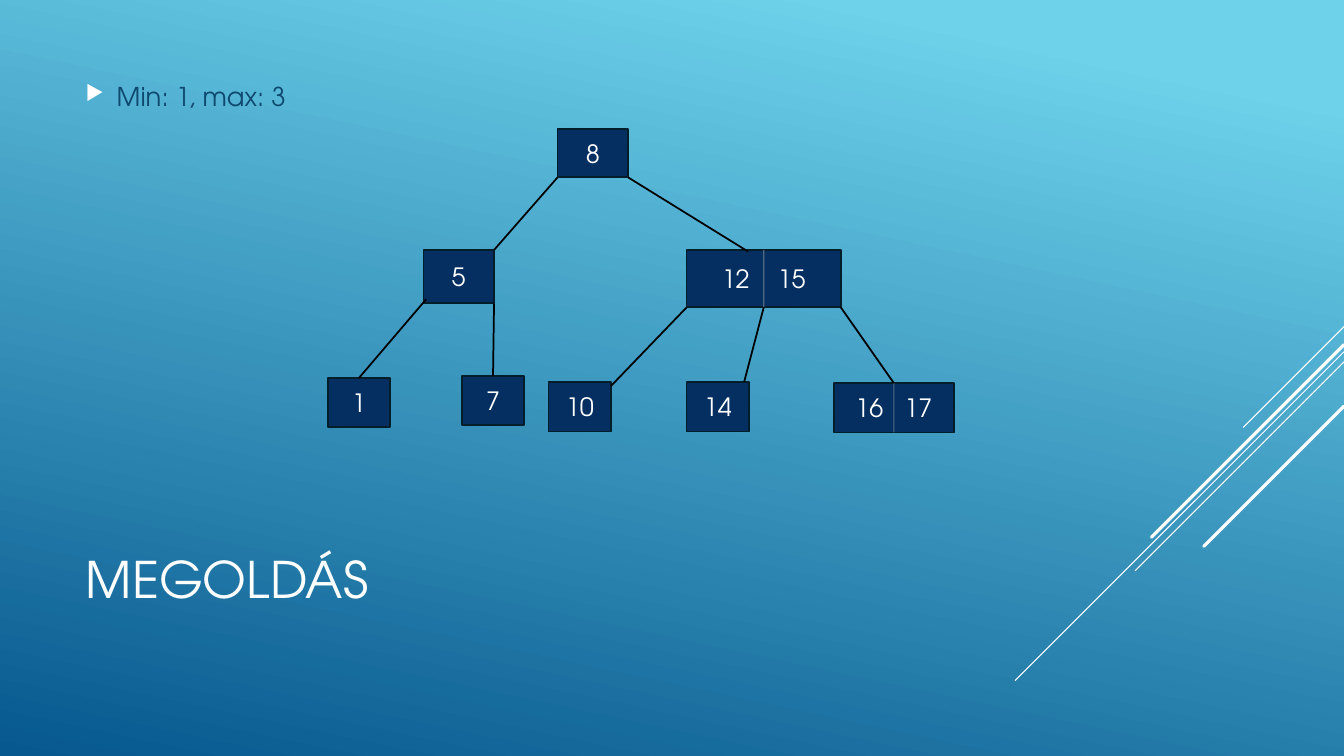
from dataclasses import dataclass

from lxml import etree
from pptx import Presentation
from pptx.dml.color import RGBColor
from pptx.enum.shapes import MSO_CONNECTOR, MSO_SHAPE
from pptx.enum.text import MSO_ANCHOR, MSO_AUTO_SIZE, PP_ALIGN
from pptx.oxml.ns import qn
from pptx.util import Inches, Pt

STRAIGHT = MSO_CONNECTOR.STRAIGHT
RECTANGLE = MSO_SHAPE.RECTANGLE
MIDDLE = MSO_ANCHOR.MIDDLE
LEFT, CENTER = PP_ALIGN.LEFT, PP_ALIGN.CENTER
NO_AUTOFIT = MSO_AUTO_SIZE.NONE


@dataclass(frozen=True)
class Theme:
    """Colours, font and type sizes of the deck."""
    sky: str = "6ED2EB"
    deep: str = "06588E"
    white: str = "FFFFFF"
    body: str = "0F496F"
    node: str = "052F61"
    border: str = "021E2B"
    divider: str = "89919C"
    edge: str = "000000"
    font: str = "TeX Gyre Adventor"
    title_size: float = 36
    body_size: float = 18.5
    node_size: float = 18


THEME = Theme()
SIDE_SITES = {(0.5, 0): 0, (0.5, 1): 2}

NODES = {
    "8": (2.28, 0, 0.7, 0.48),
    "5": (0.95, 1.2, 0.7, 0.53),
    "12 15": (3.56, 1.2, 1.53, 0.57),
    "1": (0, 2.47, 0.62, 0.49),
    "7": (1.33, 2.45, 0.62, 0.49),
    "10": (2.19, 2.51, 0.62, 0.49),
    "14": (3.56, 2.51, 0.62, 0.49),
    "16 17": (5.02, 2.52, 1.19, 0.49),
}
KEY_GAPS = {"12 15": 15, "16 17": 10}
EDGES = [
    ("8", (0, 1), "5", (1, 0)),
    ("5", (0.04, 0.92), "1", (0.5, 0)),
    ("8", (1, 1), "12 15", (0.4, 0.03)),
    ("12 15", (0, 1), "10", (1, 0.08)),
    ("12 15", (0.5, 1), "14", (0.92, 0)),
    ("12 15", (1, 1), "16 17", (0.5, 0)),
    ("5", (1, 1), "7", (0.5, 0)),
]
STREAKS = [(0, 1, 0.75), (0.25, 3.26, 0.75), (0.35, 2.07, 0.75),
           (0.18, 1.91, 2.25), (0.79, 1.39, 2.25)]


def style_font(font, size, color):
    """Give a font the theme face, a size and a colour."""
    font.name = THEME.font
    font.size = Pt(size)
    font.color.rgb = RGBColor.from_string(color)


def add_line(page, start, end, color, width):
    """Draw a straight line without shadow between two points."""
    line = page.shapes.add_connector(STRAIGHT, *start, *end)
    line.line.color.rgb = RGBColor.from_string(color)
    line.line.width = Pt(width)
    etree.SubElement(line._element.spPr, qn("a:effectLst"))
    return line


def paint_background(page):
    """Fill the page with the slanted blue gradient."""
    fill = page.background.fill
    fill.gradient()
    fill.gradient_angle = 258
    stops = ((0.1, THEME.sky), (1, THEME.deep))
    for stop, (position, color) in zip(fill.gradient_stops, stops):
        stop.position = position
        stop.color.rgb = RGBColor.from_string(color)


def add_streaks(page, right, top):
    """Draw diagonal streaks running down from the right edge."""
    for offset, run, width in STREAKS:
        start = (Inches(right), Inches(top + offset))
        end = (Inches(right - run), Inches(top + offset + run))
        streak = add_line(page, start, end, THEME.white, width)
        streak._element.spPr.find(qn("a:ln")).set("cap", "rnd")


def add_title(page, box, text):
    """Place and format the title placeholder."""
    title = page.shapes.title
    title.left, title.top, title.width, title.height = map(Inches, box)
    frame = title.text_frame
    frame.text = text
    frame.auto_size = NO_AUTOFIT
    frame.vertical_anchor = MIDDLE
    para = frame.paragraphs[0]
    para.alignment = LEFT
    style_font(para.runs[0].font, THEME.title_size, THEME.white)


def add_bullet(page, box, text):
    """Write one bulleted line in the given box."""
    frame = page.shapes.add_textbox(*map(Inches, box)).text_frame
    frame.word_wrap = True
    frame.vertical_anchor = MIDDLE
    para = frame.paragraphs[0]
    para.text = text
    properties = para._p.get_or_add_pPr()
    properties.set("marL", str(Inches(0.31)))
    properties.set("indent", str(-Inches(0.31)))
    color = etree.SubElement(properties, qn("a:buClr"))
    etree.SubElement(color, qn("a:srgbClr"), val=THEME.white)
    etree.SubElement(properties, qn("a:buSzPct"), val="80000")
    etree.SubElement(properties, qn("a:buChar"), char="▶")
    para.space_after = Pt(6)
    style_font(para.runs[0].font, THEME.body_size, THEME.body)


def add_node(page, box, keys):
    """Draw a tree node, spreading its keys when it holds two."""
    node = page.shapes.add_shape(RECTANGLE, *map(Inches, box))
    node.shadow.inherit = False
    node.fill.solid()
    node.fill.fore_color.rgb = RGBColor.from_string(THEME.node)
    node.line.color.rgb = RGBColor.from_string(THEME.border)
    node.line.width = Pt(1.25)
    node.text_frame.vertical_anchor = MIDDLE
    para = node.text_frame.paragraphs[0]
    para.alignment = CENTER
    for part in keys.partition(" "):
        if part:
            span = para.add_run()
            span.text = part
            style_font(span.font, THEME.node_size, THEME.white)
            if part == " ":
                span.font._element.set("spc", str(KEY_GAPS[keys] * 100))
    return node


def point_on(node, spot):
    """Return the point at the given fractions of a node's size."""
    across, down = spot
    return (node.left + round(node.width * across),
            node.top + round(node.height * down))


def link(page, parent, start, child, end, color, width):
    """Join spots on two nodes, attaching to side middles."""
    line = add_line(page, point_on(parent, start), point_on(child, end),
                    color, width)
    if start in SIDE_SITES:
        line.begin_connect(parent, SIDE_SITES[start])
    if end in SIDE_SITES:
        line.end_connect(child, SIDE_SITES[end])
    return line


def add_tree(page, left, top):
    """Draw the search tree with its corner at the given point."""
    nodes = {keys: add_node(page, (left + x, top + y, width, height), keys)
             for keys, (x, y, width, height) in NODES.items()}
    for keys in KEY_GAPS:
        divider = link(page, nodes[keys], (0.5, 0), nodes[keys], (0.5, 1),
                       THEME.divider, 0.75)
        color = next(divider._element.spPr.iter(qn("a:srgbClr")))
        etree.SubElement(color, qn("a:alpha"), val="60000")
    for parent, start, child, end in EDGES:
        link(page, nodes[parent], start, nodes[child], end, THEME.edge, 1.25)


def main():
    """Build the deck and save it."""
    deck = Presentation()
    deck.slide_width, deck.slide_height = Inches(13.33), Inches(7.5)
    page = deck.slides.add_slide(deck.slide_layouts.get_by_name("Title Only"))
    paint_background(page)
    add_streaks(page, 13.33, 3.24)
    add_title(page, (0.75, 4.91, 9.33, 1.65), "MEGOLDÁS")
    add_bullet(page, (0.75, 0.75, 9.33, 0.4), "Min: 1, max: 3")
    add_tree(page, 3.25, 1.28)
    deck.save("out.pptx")


if __name__ == "__main__":
    main()
